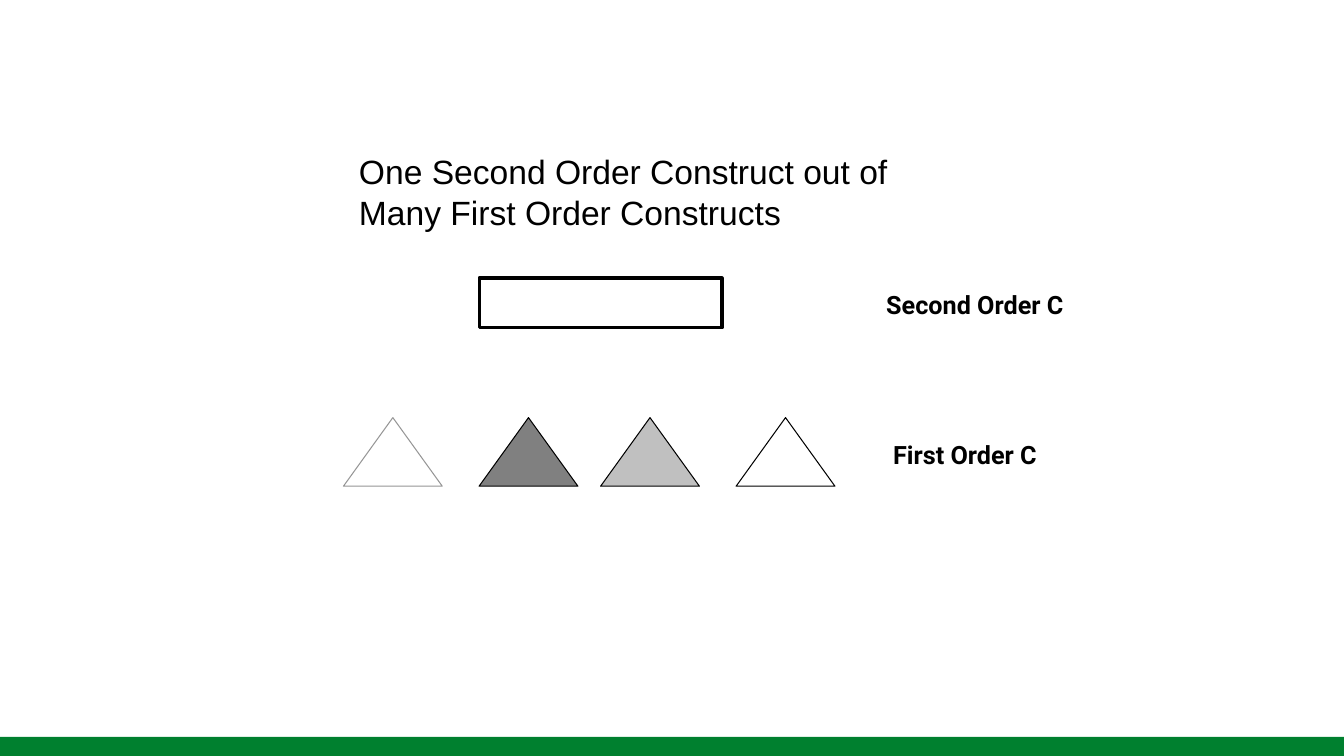
from pptx import Presentation
from pptx.dml.color import RGBColor
from pptx.enum.shapes import MSO_SHAPE
from pptx.enum.text import MSO_ANCHOR, MSO_AUTO_SIZE, PP_ALIGN
from pptx.util import Pt

RECTANGLE = MSO_SHAPE.RECTANGLE
TRIANGLE = MSO_SHAPE.ISOSCELES_TRIANGLE
LEFT = PP_ALIGN.LEFT
TOP, MIDDLE = MSO_ANCHOR.TOP, MSO_ANCHOR.MIDDLE
NO_AUTOFIT = MSO_AUTO_SIZE.NONE


def add_box(kind, position, fill, line=None, width=0.75):
    shape = slide.shapes.add_shape(kind, *map(Pt, position))
    shape.shadow.inherit = False
    shape.fill.solid()
    shape.fill.fore_color.rgb = RGBColor.from_string(fill)
    if line:
        shape.line.color.rgb = RGBColor.from_string(line)
        shape.line.width = Pt(width)
    else:
        shape.line.fill.background()


def write_text(shape, text, anchor, spacing, font_values):
    frame = shape.text_frame
    frame_values = {
        "margin_left": 0, "margin_top": 0, "margin_right": 0, "margin_bottom": 0,
        "word_wrap": True, "auto_size": NO_AUTOFIT, "vertical_anchor": anchor,
    }
    for name, value in frame_values.items():
        setattr(frame, name, value)
    frame.text = text
    paragraph = frame.paragraphs[0]
    paragraph.alignment = LEFT
    paragraph.line_spacing = spacing
    for name, value in font_values.items():
        setattr(paragraph.font, name, value)
    paragraph.font.color.rgb = RGBColor.from_string("000000")


presentation = Presentation()
presentation.slide_width = Pt(960)
presentation.slide_height = Pt(540)
slide = presentation.slides.add_slide(presentation.slide_layouts[5])

add_box(RECTANGLE, (0, 526.4, 960, 13.6), "00802F")

title = slide.shapes.title
title.left, title.top, title.width, title.height = map(Pt, (256.4, 106.6, 392.4, 60.5))
write_text(title, "One Second Order Construct out of\vMany First Order Constructs",
           MIDDLE, 1.0, {"name": "Arial", "size": Pt(24), "bold": False})

first_order_triangles = [
    (245.3, "FFFFFF", "969696"),
    (342.2, "808080", "000000"),
    (429, "C0C0C0", "000000"),
    (525.8, "FFFFFF", "000000"),
]
for left, fill, line in first_order_triangles:
    add_box(TRIANGLE, (left, 298.3, 70.6, 49), fill, line)

add_box(RECTANGLE, (342.2, 198.6, 173.5, 35.6), "FFFFFF", "000000", 2.25)

labels = [("First Order C", 638, 316), ("Second Order C", 633, 209)]
for text, left, top in labels:
    label = slide.shapes.add_textbox(Pt(left), Pt(top), Pt(142.6), Pt(19.4))
    write_text(label, text, TOP, 0.9, {"name": "Roboto", "size": Pt(18), "bold": True})

presentation.save("out.pptx")
